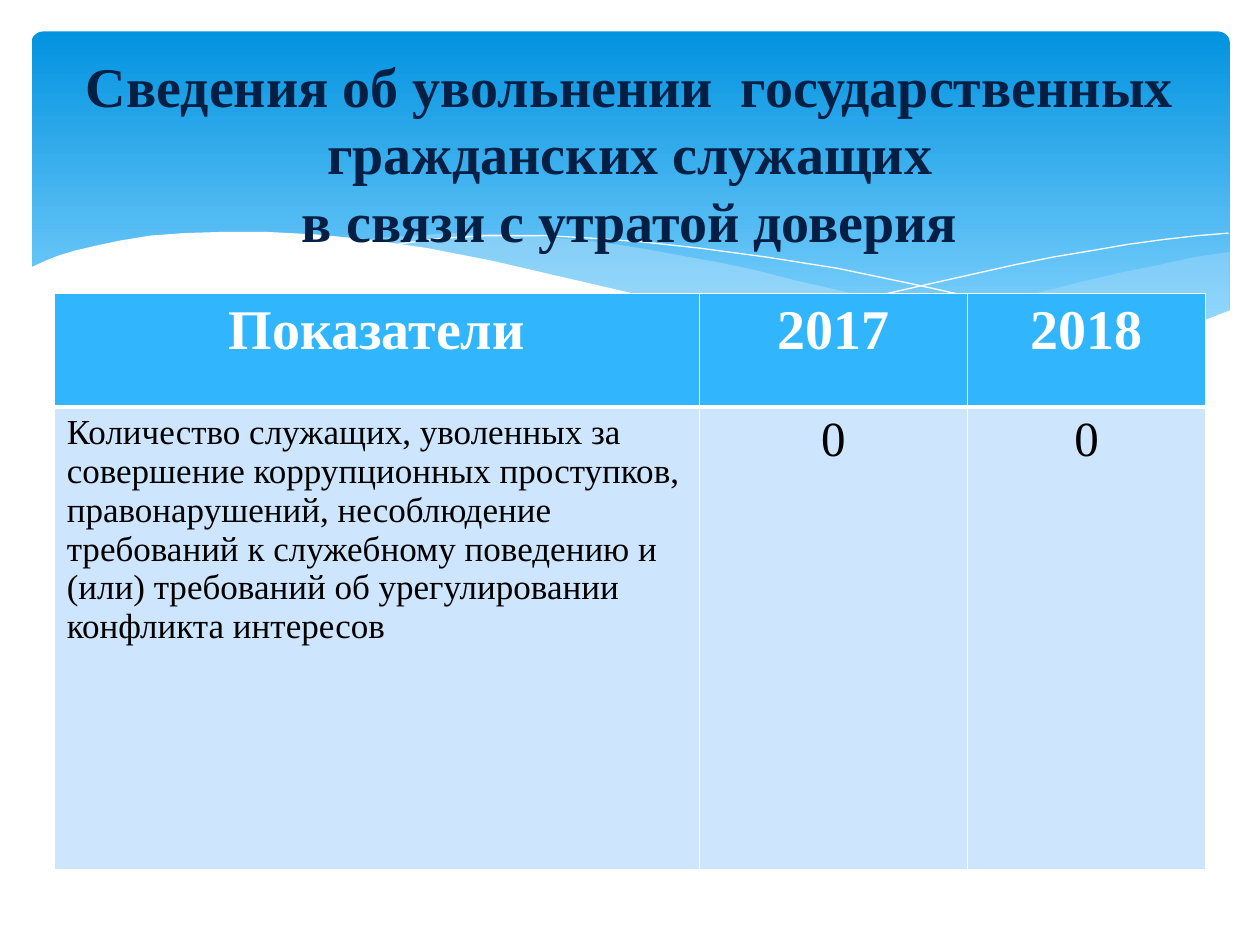
"""Slide on civil servants dismissed for loss of trust: wave banner, title and table."""
from lxml import etree
from pptx import Presentation
from pptx import util as u
from pptx.dml.color import RGBColor
from pptx.enum import shapes, text
from pptx.oxml.ns import qn

THEME = {
    "font": "Times New Roman",
    "title": "041F44", "white": "FFFFFF", "body": "000000",
    "sky_top": "0293E0", "sky_bottom": "83D3FE", "mist": "C6E7FC",
    "header_fill": "31B6FD", "row_fill": "CEE5FE",
    "heading_size": 32, "text_size": 20, "value_size": 28,
}

deck = Presentation()
deck.slide_width, deck.slide_height = u.Inches(10), u.Inches(7.5)
slide = deck.slides.add_slide(deck.slide_layouts[6])
UNIT = deck.slide_width // 1000


def rgb(role):
    return RGBColor.from_string(THEME[role])


def style(paragraph, size, role, bold, align):
    paragraph.alignment = align
    paragraph.font.name = THEME["font"]
    paragraph.font.size = u.Pt(THEME[size])
    paragraph.font.color.rgb = rgb(role)
    paragraph.font.bold = bold


CENTER, LEFT = text.PP_ALIGN.CENTER, text.PP_ALIGN.LEFT

sky = slide.shapes.add_shape(shapes.MSO_SHAPE.ROUNDED_RECTANGLE,
                             *(n * UNIT for n in (25, 25, 951, 270)))
sky.adjustments[0] = 0.034
sky.shadow.inherit = False
sky.line.fill.background()
sky.fill.gradient()
sky.fill.gradient_angle = 270
for stop, role, position in zip(sky.fill.gradient_stops, ("sky_top", "sky_bottom"), (0, 0.9)):
    stop.color.rgb = rgb(role)
    stop.position = position

right_mist = [(975, 200), (948, 204), (921, 210), (891, 216), (861, 223), (805, 237),
              (753, 248), (706, 257), (661, 265), (691, 269), (719, 272), (745, 275),
              (781, 277), (814, 278), (844, 277), (872, 274), (897, 270), (921, 265),
              (942, 259), (963, 252), (976, 247), (976, 200)]
middle_mist = [(893, 273), (866, 269), (837, 265), (807, 260), (775, 254), (741, 247),
               (706, 240), (668, 231), (629, 222), (598, 214), (569, 208), (541, 203),
               (514, 198), (489, 194), (465, 191), (442, 189), (420, 187), (399, 186),
               (361, 185), (328, 187), (299, 189), (286, 191), (323, 196), (362, 203),
               (404, 211), (449, 222), (491, 232), (530, 240), (566, 248), (601, 255),
               (634, 261), (665, 266), (695, 270), (722, 274), (748, 276), (773, 277),
               (807, 278), (838, 278), (867, 276)]
falling_line = [(309, 195), (328, 192), (353, 189), (387, 187), (433, 187), (469, 189),
                (510, 192), (556, 197), (608, 204), (665, 213), (727, 226), (795, 241),
                (831, 251), (869, 261), (907, 272)]
rising_line = [(613, 257), (653, 246), (695, 235), (748, 223), (806, 210), (836, 204),
               (866, 199), (895, 194), (924, 190), (951, 187), (975, 185)]
white_wave = [(977, 246), (959, 253), (940, 259), (920, 265), (899, 269), (875, 273),
              (850, 275), (823, 277), (793, 276), (761, 275), (726, 272), (688, 268),
              (648, 262), (603, 254), (555, 245), (503, 233), (447, 220), (391, 207),
              (340, 197), (292, 190), (250, 186), (211, 184), (177, 184), (146, 185),
              (119, 187), (95, 191), (76, 195), (59, 199), (46, 203), (36, 207),
              (23, 213), (23, 329), (977, 329)]

for points, role, opacity in ((right_mist, "mist", 29), (middle_mist, "mist", 40),
                              (falling_line, None, 0), (rising_line, None, 0),
                              (white_wave, "white", 100)):
    outline = slide.shapes.build_freeform(*points[0], scale=UNIT)
    outline.add_line_segments(points[1:], close=role is not None)
    wave = outline.convert_to_shape()
    wave.shadow.inherit = False
    if role is None:
        wave.fill.background()
        wave.line.color.rgb = rgb("white")
        wave.line.width = u.Pt(0)
        continue
    wave.line.fill.background()
    wave.fill.solid()
    wave.fill.fore_color.rgb = rgb(role)
    if opacity < 100:
        tint = wave._element.spPr.find(qn("a:solidFill"))[0]
        etree.SubElement(tint, qn("a:alpha"), val=str(opacity * 1000))

rows = [
    ["Показатели", "2017", "2018"],
    ["Количество служащих, уволенных за совершение коррупционных проступков, "
     "правонарушений, несоблюдение требований к служебному поведению и (или) "
     "требований об урегулировании конфликта интересов", "0", "0"],
]
dismissals = slide.shapes.add_table(2, 3, *(n * UNIT for n in (43, 233, 914, 457))).table
for column, width in zip(dismissals.columns, (512, 213, 189)):
    column.width = width * UNIT
for row, height in zip(dismissals.rows, (90, 367)):
    row.height = height * UNIT

for r, entries in enumerate(rows):
    heavy_side = "lnT" if r else "lnB"
    for c, entry in enumerate(entries):
        cell = dismissals.cell(r, c)
        cell.text = entry
        borders = cell._tc.get_or_add_tcPr()
        for side in ("lnL", "lnR", "lnT", "lnB"):
            weight = u.Pt(3 if side == heavy_side else 1)
            edge = etree.SubElement(borders, qn(f"a:{side}"), w=str(int(weight)))
            paint = etree.SubElement(edge, qn("a:solidFill"))
            etree.SubElement(paint, qn("a:srgbClr"), val=THEME["white"])
        cell.fill.solid()
        cell.fill.fore_color.rgb = rgb("row_fill" if r else "header_fill")
        if r == 0:
            look = ("heading_size", "white", True, CENTER)
        elif c == 0:
            look = ("text_size", "body", False, LEFT)
        else:
            look = ("value_size", "body", False, CENTER)
        style(cell.text_frame.paragraphs[0], *look)

title = slide.shapes.add_textbox(*(n * UNIT for n in (50, 68, 900, 106))).text_frame
title.word_wrap = True
title.vertical_anchor = text.MSO_ANCHOR.MIDDLE
title.text = "Сведения об увольнении  государственных гражданских служащих\vв связи с утратой доверия"
style(title.paragraphs[0], "heading_size", "title", True, CENTER)

deck.save("out.pptx")
